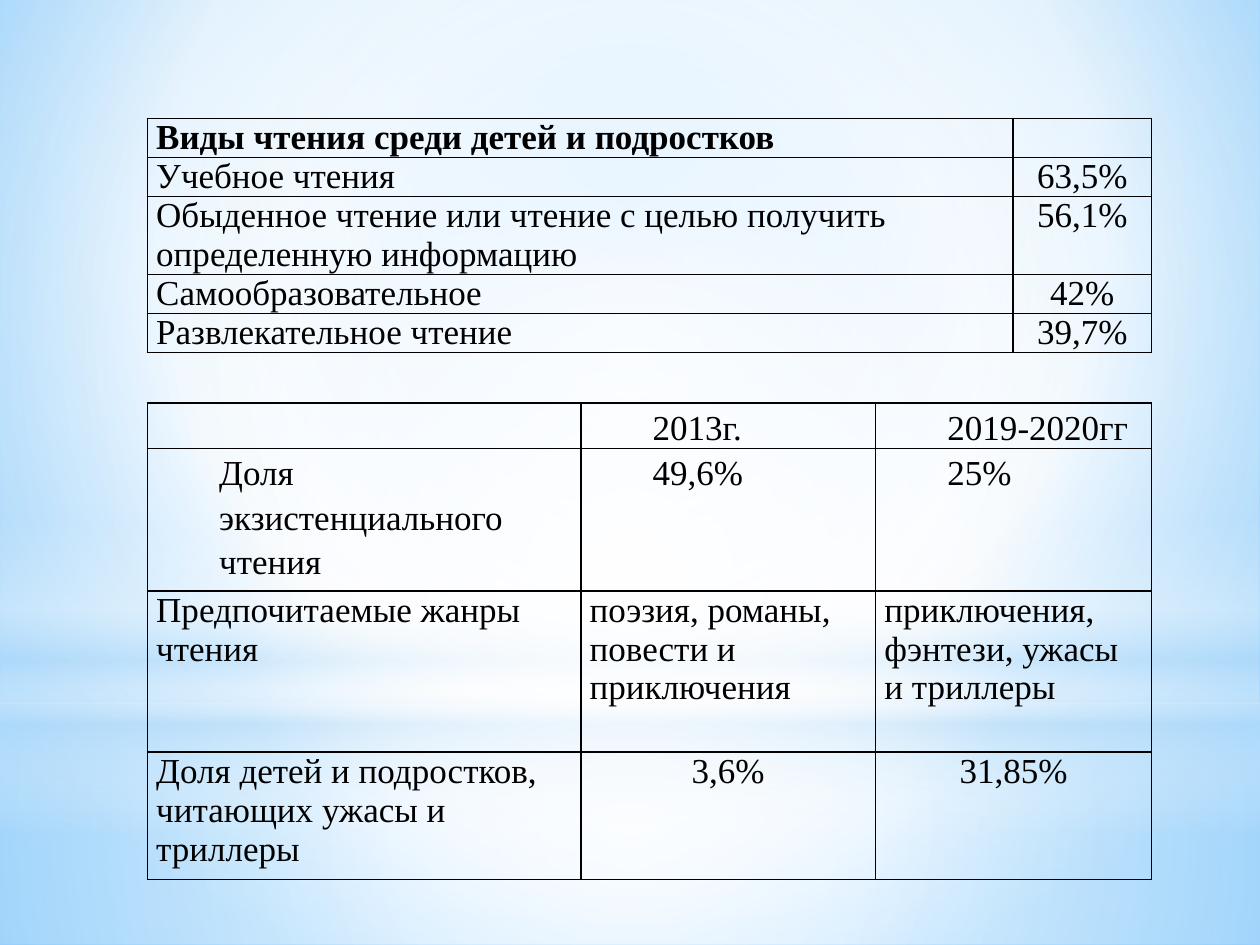
from dataclasses import dataclass
from typing import Any, Optional

from lxml.etree import SubElement
from pptx import Presentation
from pptx.dml.color import RGBColor
from pptx.enum.shapes import MSO_SHAPE
from pptx.enum.text import PP_ALIGN
from pptx.oxml.ns import qn
from pptx.util import Inches, Pt

WHITE = RGBColor(0xFF, 0xFF, 0xFF)
BLACK = RGBColor(0, 0, 0)
PALE_BLUE = RGBColor(0xB4, 0xDC, 0xFA)
SKY = RGBColor(0x9E, 0xD5, 0xFF)
DEEP_SKY = RGBColor(0x5B, 0xB9, 0xFF)
FONT = "Times New Roman"
TABLE_LEFT = 1.17
CENTRE = (50, 50, 50, 50)


@dataclass(frozen=True)
class Stop:
    position: int
    color: RGBColor
    opacity: int = 100


@dataclass(frozen=True)
class Glow:
    """A backdrop shape; without a focus its gradient runs downwards."""
    kind: MSO_SHAPE
    top: float
    height: float
    stops: tuple[Stop, ...]
    focus: Optional[tuple[int, ...]] = CENTRE


@dataclass(frozen=True)
class Entry:
    text: str = ""
    bold: bool = False
    align: PP_ALIGN = PP_ALIGN.LEFT
    indent: float = 0
    spacing: float = 1.0


@dataclass(frozen=True)
class Grid:
    top: float
    columns: tuple[float, ...]
    heights: tuple[float, ...]
    rows: tuple[tuple[Entry, ...], ...]


def centred(text: str) -> Entry:
    return Entry(text, align=PP_ALIGN.CENTER)


def indented(text: str) -> Entry:
    return Entry(text, indent=0.5, spacing=1.15)


GLOWS = (
    Glow(MSO_SHAPE.RECTANGLE, 5.58, 1.92,
         (Stop(0, WHITE, 91), Stop(37, WHITE, 76), Stop(100, PALE_BLUE, 79))),
    Glow(MSO_SHAPE.RECTANGLE, 0, 5.58,
         (Stop(0, WHITE, 89), Stop(48, WHITE, 62), Stop(100, PALE_BLUE, 79))),
    Glow(MSO_SHAPE.RECTANGLE, 4.12, 2.5,
         (Stop(0, WHITE, 0), Stop(29, WHITE, 30), Stop(45, PALE_BLUE, 40),
          Stop(55, WHITE, 26), Stop(65, PALE_BLUE, 60), Stop(100, WHITE, 0)),
         focus=None),
    Glow(MSO_SHAPE.OVAL, 1.75, 5.58, (Stop(0, WHITE), Stop(56, WHITE, 0))),
)

READING_KINDS = Grid(0.94, (6.87, 1.1), (0.31, 0.31, 0.62, 0.31, 0.31), (
    (Entry("Виды чтения среди детей и подростков", bold=True), Entry()),
    (Entry("Учебное чтения"), centred("63,5%")),
    (Entry("Обыденное чтение или чтение с целью получить определенную информацию"),
     centred("56,1%")),
    (Entry("Самообразовательное"), centred("42%")),
    (Entry("Развлекательное чтение"), centred("39,7%")),
))

YEAR_COMPARISON = Grid(3.2, (3.44, 2.34, 2.19), (0.36, 1.13, 1.28, 1.01), (
    (Entry(), indented("2013г."), indented("2019-2020гг")),
    (indented("Доля экзистенциального чтения"), indented("49,6%"), indented("25%")),
    (Entry("Предпочитаемые жанры чтения"),
     Entry("поэзия, романы, повести и приключения"),
     Entry("приключения, фэнтези, ужасы и триллеры")),
    (Entry("Доля детей и подростков, читающих ужасы и триллеры"),
     centred("3,6%"), centred("31,85%")),
))


def paint_gradient(owner: Any, fill: Any, stops: tuple[Stop, ...],
                   focus: Optional[tuple[int, ...]]) -> None:
    fill.gradient()
    gradient = owner.element.find(".//" + qn("a:gradFill"))
    for child in list(gradient):
        gradient.remove(child)
    stop_list = SubElement(gradient, qn("a:gsLst"))
    for stop in stops:
        mark = SubElement(stop_list, qn("a:gs"), pos=str(stop.position * 1000))
        color = SubElement(mark, qn("a:srgbClr"), val=str(stop.color))
        if stop.opacity < 100:
            SubElement(color, qn("a:alpha"), val=str(stop.opacity * 1000))
    if focus is None:
        SubElement(gradient, qn("a:lin"), ang="5400000", scaled="0")
    else:
        circle = SubElement(gradient, qn("a:path"), {"path": "circle"})
        sides = {side: str(share * 1000) for side, share in zip("ltrb", focus)}
        SubElement(circle, qn("a:fillToRect"), sides)


def add_glow(slide: Any, glow: Glow) -> None:
    shape = slide.shapes.add_shape(glow.kind, 0, Inches(glow.top),
                                   Inches(10), Inches(glow.height))
    shape.shadow.inherit = False
    shape.line.fill.background()
    paint_gradient(shape, shape.fill, glow.stops, glow.focus)


def border_cell(cell: Any) -> None:
    properties = cell._tc.get_or_add_tcPr()
    for index, side in enumerate(("lnL", "lnR", "lnT", "lnB")):
        line = SubElement(properties, qn(f"a:{side}"), w=str(Pt(1)))
        solid = SubElement(line, qn("a:solidFill"))
        SubElement(solid, qn("a:srgbClr"), val=str(BLACK))
        properties.insert(index, line)


def write(cell: Any, text: str, *, bold: bool, align: PP_ALIGN,
          indent: float, spacing: float) -> None:
    paragraph = cell.text_frame.paragraphs[0]
    paragraph.alignment = align
    paragraph.line_spacing = spacing
    if indent:
        paragraph._p.get_or_add_pPr().set("marL", str(Inches(indent)))
    run = paragraph.add_run()
    run.text = text
    run.font.name = FONT
    run.font.size = Pt(20)
    run.font.bold = bold
    run.font.color.rgb = BLACK


def add_grid(slide: Any, grid: Grid) -> None:
    table = slide.shapes.add_table(
        len(grid.rows), len(grid.columns), Inches(TABLE_LEFT), Inches(grid.top),
        Inches(sum(grid.columns)), Inches(sum(grid.heights))).table
    table.first_row = table.horz_banding = False
    for column, width in zip(table.columns, grid.columns):
        column.width = Inches(width)
    for row, height, entries in zip(table.rows, grid.heights, grid.rows):
        row.height = Inches(height)
        for cell, entry in zip(row.cells, entries):
            cell.margin_left = cell.margin_right = Inches(0.07)
            cell.margin_top = cell.margin_bottom = 0
            cell.fill.background()
            border_cell(cell)
            if entry.text:
                write(cell, entry.text, bold=entry.bold, align=entry.align,
                      indent=entry.indent, spacing=entry.spacing)


def main() -> None:
    deck = Presentation()
    deck.slide_width, deck.slide_height = Inches(10), Inches(7.5)
    slide = deck.slides.add_slide(deck.slide_layouts[6])
    paint_gradient(slide, slide.background.fill,
                   (Stop(0, SKY), Stop(60, WHITE), Stop(100, DEEP_SKY)),
                   (20, 10, 20, 60))
    for glow in GLOWS:
        add_glow(slide, glow)
    for grid in (READING_KINDS, YEAR_COMPARISON):
        add_grid(slide, grid)
    deck.save("out.pptx")


if __name__ == "__main__":
    main()
